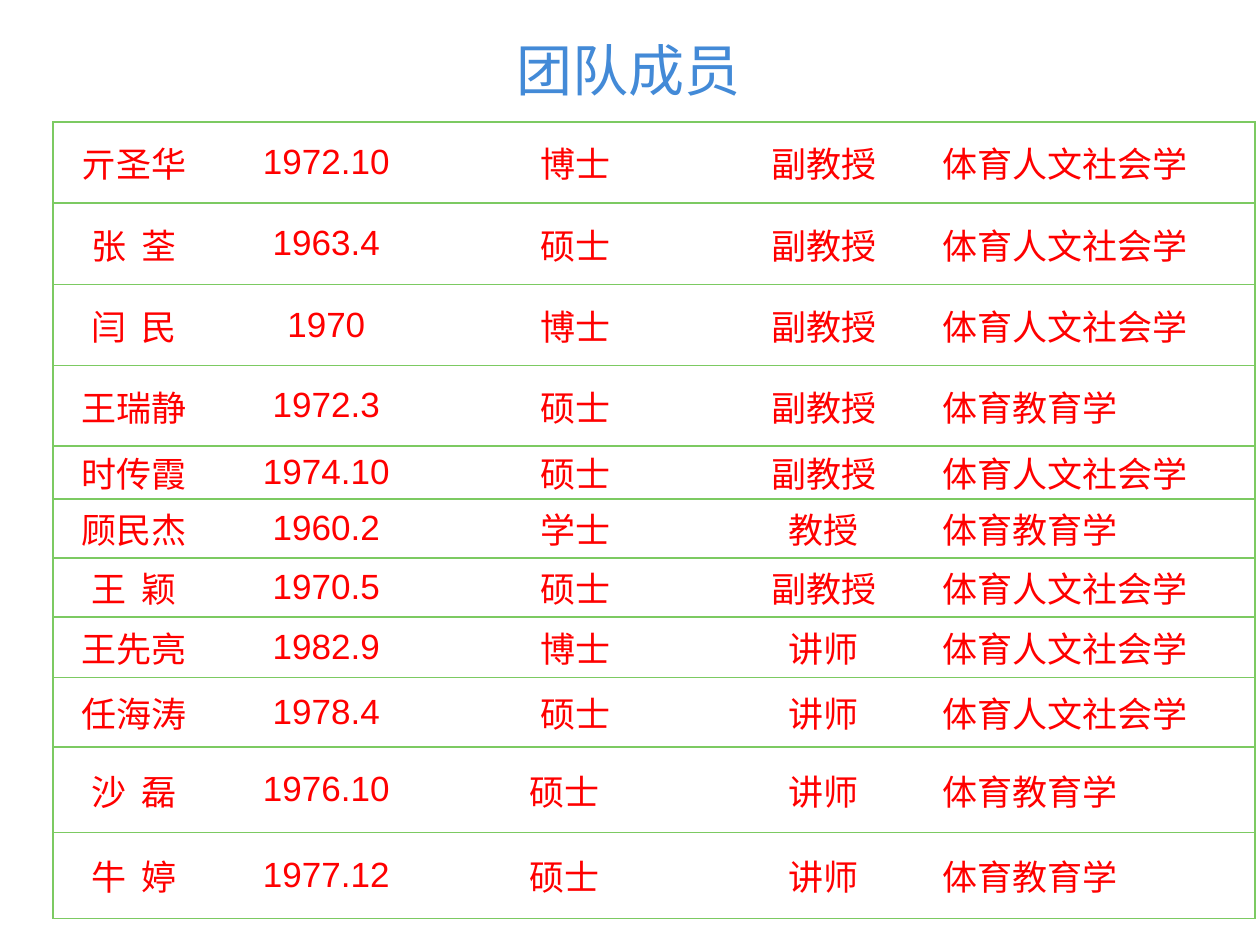
from dataclasses import dataclass

import lxml.etree
import pptx
import pptx.dml.color
import pptx.enum.shapes
import pptx.enum.text
import pptx.oxml.ns
import pptx.util

Inches = pptx.util.Inches
Pt = pptx.util.Pt
RGB = pptx.dml.color.RGBColor
ALIGN = pptx.enum.text.PP_ALIGN
ANCHOR = pptx.enum.text.MSO_ANCHOR
qn = pptx.oxml.ns.qn


@dataclass(frozen=True)
class Theme:
    title_color: str = "438AD7"
    text_color: str = "FF0000"
    rule_color: str = "7CCA62"
    cell_fill: str = "FFFFFF"
    band_fill: str = "FFFFFF"
    band_opacity: int = 85
    title_font: str = "Montserrat"
    table_font: str = "Arial"
    title_size: int = 32
    table_size: int = 20
    rule_width: int = 1


@dataclass(frozen=True)
class Member:
    name: str
    born: str
    degree: str
    post: str
    field: str
    row_height: float
    degree_indent: float = 0

    def texts(self) -> tuple[str, ...]:
        return self.name, self.born, self.degree, self.post, self.field


THEME = Theme()
SOCIOLOGY = "体育人文社会学"
EDUCATION = "体育教育学"
COLUMN_WIDTHS = (1.29, 1.76, 2.2, 1.74, 2.55)
DEGREE_COLUMN = 2
MEMBERS = (
    Member("亓圣华", "1972.10", "博士", "副教授", SOCIOLOGY, 0.64),
    Member("张  荃", "1963.4", "硕士", "副教授", SOCIOLOGY, 0.65),
    Member("闫  民", "1970", "博士", "副教授", SOCIOLOGY, 0.64),
    Member("王瑞静", "1972.3", "硕士", "副教授", EDUCATION, 0.64),
    Member("时传霞", "1974.10", "硕士", "副教授", SOCIOLOGY, 0.42),
    Member("顾民杰", "1960.2", "学士", "教授", EDUCATION, 0.47),
    Member("王  颖", "1970.5", "硕士", "副教授", SOCIOLOGY, 0.47),
    Member("王先亮", "1982.9", "博士", "讲师", SOCIOLOGY, 0.48),
    Member("任海涛", "1978.4", "硕士", "讲师", SOCIOLOGY, 0.55),
    Member("沙  磊", "1976.10", "硕士", "讲师", EDUCATION, 0.68, 0.66),
    Member("牛  婷", "1977.12", "硕士", "讲师", EDUCATION, 0.68, 0.66),
)


def add_run(p, text: str, font: str, size: int, color: str) -> None:
    r = p.add_run()
    r.text = text
    r.font.name = font
    r.font.size = Pt(size)
    r.font.color.rgb = RGB.from_string(color)


def add_header_band(s) -> None:
    sp = s.shapes.add_shape(
        pptx.enum.shapes.MSO_SHAPE.RECTANGLE, 0, 0, Inches(10), Inches(1.06)
    )
    sp.shadow.inherit = False
    sp.line.fill.background()
    sp.fill.solid()
    sp.fill.fore_color.rgb = RGB.from_string(THEME.band_fill)
    color = sp._element.spPr.find(qn("a:solidFill"))[0]
    lxml.etree.SubElement(color, qn("a:alpha"), val=str(THEME.band_opacity * 1000))


def add_title(s, text: str) -> None:
    sp = s.shapes.add_textbox(Inches(0.46), Inches(0.17), Inches(9.06), Inches(0.77))
    tf = sp.text_frame
    tf.word_wrap = True
    tf.vertical_anchor = ANCHOR.BOTTOM
    tf.margin_top = 0
    tf.margin_bottom = Inches(0.12)
    p = tf.paragraphs[0]
    p.alignment = ALIGN.CENTER
    p.line_spacing = 0.9
    add_run(p, text, THEME.title_font, THEME.title_size, THEME.title_color)


def set_borders(cell, visible: str) -> None:
    """Rule the sides named in visible (letters of LRTB) and clear the others."""
    tc_pr = cell._tc.get_or_add_tcPr()
    for side in "LRTB":
        ln = lxml.etree.SubElement(tc_pr, qn(f"a:ln{side}"), w=str(Pt(THEME.rule_width)))
        if side in visible:
            fill = lxml.etree.SubElement(ln, qn("a:solidFill"))
            lxml.etree.SubElement(fill, qn("a:srgbClr"), val=THEME.rule_color)
        else:
            lxml.etree.SubElement(ln, qn("a:noFill"))


def fill_cell(cell, text: str, alignment, borders: str, indent: float) -> None:
    set_borders(cell, borders)
    cell.fill.solid()
    cell.fill.fore_color.rgb = RGB.from_string(THEME.cell_fill)
    cell.vertical_anchor = ANCHOR.MIDDLE
    cell.margin_left = cell.margin_right = Inches(0.07)
    cell.margin_top = cell.margin_bottom = 0
    p = cell.text_frame.paragraphs[0]
    p.alignment = alignment
    if indent:
        p._p.get_or_add_pPr().set("indent", str(Inches(indent)))
    add_run(p, text, THEME.table_font, THEME.table_size, THEME.text_color)


def add_member_table(s, members: tuple[Member, ...]) -> None:
    last = len(COLUMN_WIDTHS) - 1
    table = s.shapes.add_table(
        len(members), len(COLUMN_WIDTHS), Inches(0.42), Inches(0.97),
        Inches(sum(COLUMN_WIDTHS)), Inches(sum(m.row_height for m in members)),
    ).table
    table.first_row = table.horz_banding = False
    for column, width in zip(table.columns, COLUMN_WIDTHS):
        column.width = Inches(width)
    for row, member in zip(table.rows, members):
        row.height = Inches(member.row_height)
        for i, (cell, text) in enumerate(zip(row.cells, member.texts())):
            indent = member.degree_indent if i == DEGREE_COLUMN else 0
            alignment = ALIGN.JUSTIFY if i == last else ALIGN.LEFT if indent else ALIGN.CENTER
            borders = "TB" + {0: "L", last: "R"}.get(i, "")
            fill_cell(cell, text, alignment, borders, indent)


def main() -> None:
    prs = pptx.Presentation()
    prs.slide_width, prs.slide_height = Inches(10), Inches(7.5)
    s = prs.slides.add_slide(prs.slide_layouts[6])
    add_header_band(s)
    add_title(s, "团队成员")
    add_member_table(s, MEMBERS)
    prs.save("out.pptx")


if __name__ == "__main__":
    main()
